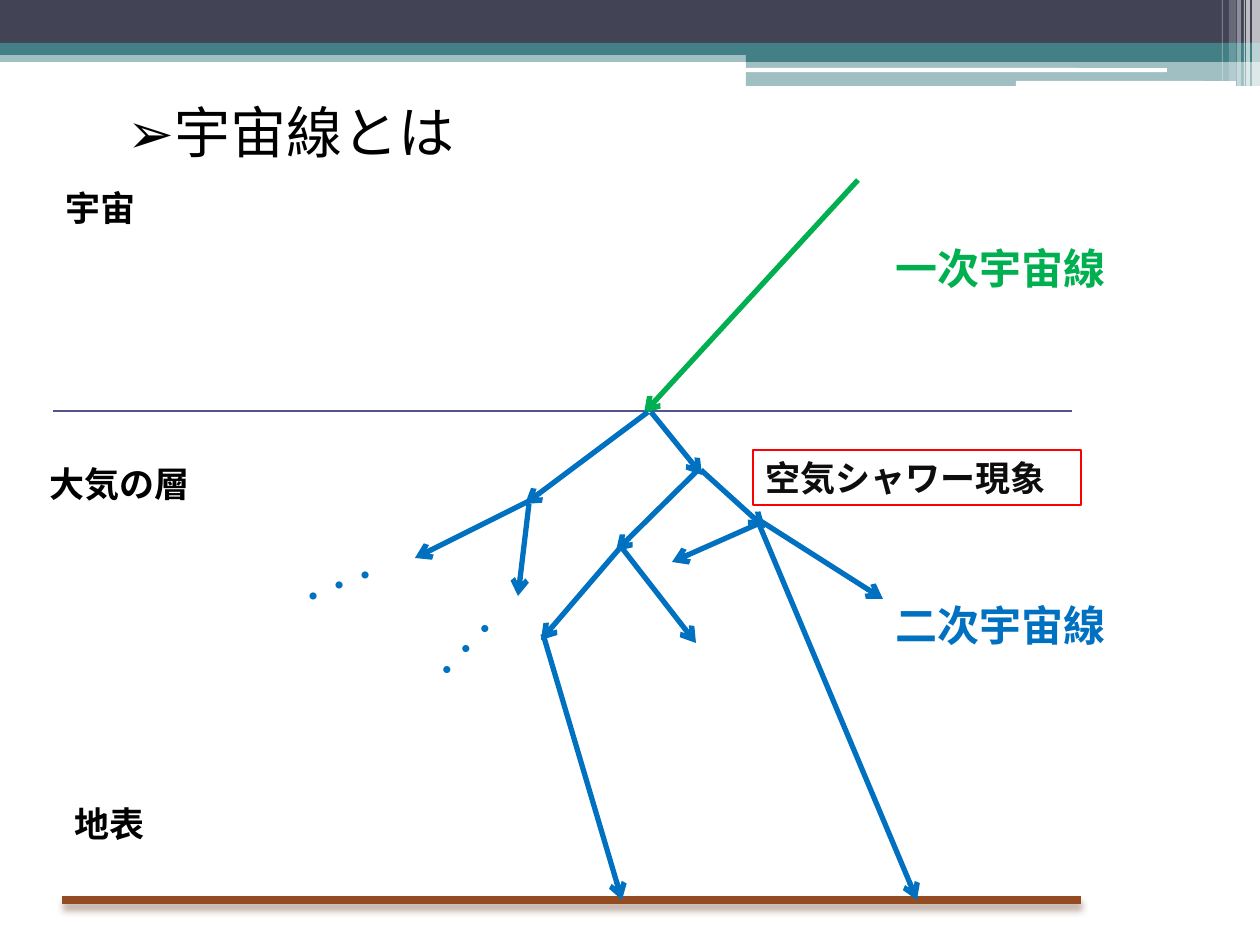
import pptx
import pptx.util
import pptx.dml.color
import pptx.enum.shapes
import pptx.enum.text
import pptx.oxml
import pptx.oxml.ns

PX = 914400 / 126
COLORS = {
    "navy": "424456", "teal": "438086", "white": "FFFFFF", "black": "000000",
    "ink": "0D0D0D", "border": "53548A", "ground": "934C22", "shade": "623217",
    "primary": "00B050", "secondary": "0070C0", "frame": "FF0000",
}
SHAPES = pptx.enum.shapes.MSO_SHAPE
HEADING = {"name": "Roboto", "bold": True, "size": pptx.util.Pt(24)}
CAPTION = {"name": "Cambria", "bold": True, "size": pptx.util.Pt(20)}
DOTS = {"name": "Cambria", "bold": True, "size": pptx.util.Pt(16)}


def px(value):
    return pptx.util.Emu(round(value * PX))


def rgb(color):
    return pptx.dml.color.RGBColor.from_string(COLORS[color])


def drawing_xml(tag, attributes="", inner=""):
    namespace = pptx.oxml.ns.nsdecls("a")
    return pptx.oxml.parse_xml(f"<a:{tag} {namespace} {attributes}>{inner}</a:{tag}>")


def add_band(slide, kind, box, color, opacity=100):
    """Add a borderless filled shape; opacity is in percent."""
    band = slide.shapes.add_shape(kind, *map(px, box))
    band.shadow.inherit = False
    band.fill.solid()
    band.fill.fore_color.rgb = rgb(color)
    band.line.fill.background()
    if opacity < 100:
        fill_color = band.fill._xPr.find(".//" + pptx.oxml.ns.qn("a:srgbClr"))
        fill_color.append(drawing_xml("alpha", f'val="{opacity * 1000}"'))
    return band


def write(shape, text, color, font_format):
    frame = shape.text_frame
    frame.word_wrap = True
    frame.vertical_anchor = pptx.enum.text.MSO_ANCHOR.TOP
    paragraph = frame.paragraphs[0]
    paragraph.alignment = pptx.enum.text.PP_ALIGN.LEFT
    run = paragraph.add_run()
    run.text = text
    for attribute, value in font_format.items():
        setattr(run.font, attribute, value)
    run.font.color.rgb = rgb(color)


def add_label(slide, box, text, color, font_format, rotation=0):
    label = slide.shapes.add_textbox(*map(px, box))
    label.rotation = rotation
    write(label, text, color, font_format)


def add_line(slide, start, end, color, width, arrow=False, shadow=""):
    line = slide.shapes.add_connector(
        pptx.enum.shapes.MSO_CONNECTOR.STRAIGHT, *map(px, (*start, *end)))
    line.line.color.rgb = rgb(color)
    line.line.width = pptx.util.Pt(width)
    if arrow:
        line.line._get_or_add_ln().append(drawing_xml("tailEnd", 'type="arrow"'))
    line._element.spPr.append(drawing_xml("effectLst", inner=shadow))


def draw_header(slide, left, top, width):
    half = left + 746
    half_width = width - 746
    bands = [
        (left, 50, width, 12, "teal", 50),
        (left, 0, width, 43, "navy", 100),
        (left, 43, width, 12, "teal", 100),
        (half, 49, half_width, 13, "teal", 100),
        (half, 61, half_width, 25, "teal", 50),
    ]
    for x, y, w, h, color, opacity in bands:
        add_band(slide, SHAPES.RECTANGLE, (x, top + y, w, h), color, opacity)
    for x, y, w, h in [(745, 68, 422, 4), (1016, 81, 220, 5)]:
        add_band(slide, SHAPES.ROUNDED_RECTANGLE, (left + x, top + y, w, h), "white")
    stripes = [(1252, 8, 86, 65), (1246, 4, 86, 65), (1244, 1, 86, 60),
               (1237, 4, 86, 40), (1229, 7, 81, 20), (1222, 1, 81, 30)]
    for x, w, h, opacity in stripes:
        add_band(slide, SHAPES.RECTANGLE, (left + x, top, w, h), "white", opacity)


def draw_layers(slide, left, top):
    """Name space, atmosphere and ground, and draw the lines between them."""
    shadow = ('<a:outerShdw blurRad="50800" dist="38100" dir="5400000" rotWithShape="0">'
              f'<a:srgbClr val="{COLORS["shade"]}"><a:alpha val="40000"/></a:srgbClr>'
              '</a:outerShdw>')
    for x, y, color, width, effect in [(16, 231, "border", 0.75, ""),
                                       (25, 720, "ground", 4.5, shadow)]:
        add_line(slide, (left + x, top + y), (left + x + 1019, top + y),
                 color, width, shadow=effect)
    for x, y, layer in [(16, 0, "宇宙"), (0, 276, "大気の層"), (25, 616, "地表")]:
        add_label(slide, (left + x, top + y, 320, 79), layer, "black", CAPTION)


def draw_primary_ray(slide, left, top):
    add_line(slide, (left + 214, top), (left, top + 233), "primary", 3, arrow=True)
    add_label(slide, (left + 239, top + 56, 297, 63), "一次宇宙線", "primary", HEADING)


def draw_air_shower(slide, left, top):
    """Draw the branching secondary rays with their labels."""
    rays = [
        (362, 2, 239, 94), (365, 2, 416, 65), (473, 114, 631, 490),
        (257, 224, 336, 490), (243, 91, 129, 148), (412, 60, 330, 141),
        (415, 60, 479, 118), (243, 94, 232, 186), (473, 110, 597, 189),
        (334, 138, 255, 230), (336, 138, 410, 233), (474, 113, 386, 152),
    ]
    for x1, y1, x2, y2 in rays:
        add_line(slide, (left + x1, top + y1), (left + x2, top + y2),
                 "secondary", 3, arrow=True)
    for x, y, w, h, rotation in [(0, 134, 202, 67, 338.1), (130, 190, 163, 83, 313)]:
        add_label(slide, (left + x, top + y, w, h), "・・・", "secondary", DOTS, rotation)
    add_label(slide, (left + 597, top + 183, 297, 63), "二次宇宙線", "secondary", HEADING)

    phenomenon = slide.shapes.add_shape(
        SHAPES.RECTANGLE, *map(px, (left + 467, top + 40, 328, 55)))
    phenomenon.shadow.inherit = False
    phenomenon.fill.background()
    phenomenon.line.color.rgb = rgb("frame")
    phenomenon.line.width = pptx.util.Pt(0.75)
    write(phenomenon, "空気シャワー現象", "ink", {**HEADING, "size": pptx.util.Pt(20)})


def main():
    deck = pptx.Presentation()
    deck.slide_width, deck.slide_height = px(1260), px(945)
    slide = deck.slides.add_slide(deck.slide_layouts[6])
    draw_header(slide, 0, 0, 1260)
    add_label(slide, (115, 91, 446, 81), "➢宇宙線とは", "black",
              {"name": "Roboto", "size": pptx.util.Pt(32)})
    draw_layers(slide, 37, 180)
    draw_primary_ray(slide, 644, 180)
    draw_air_shower(slide, 286, 410)
    deck.save("out.pptx")


if __name__ == "__main__":
    main()
